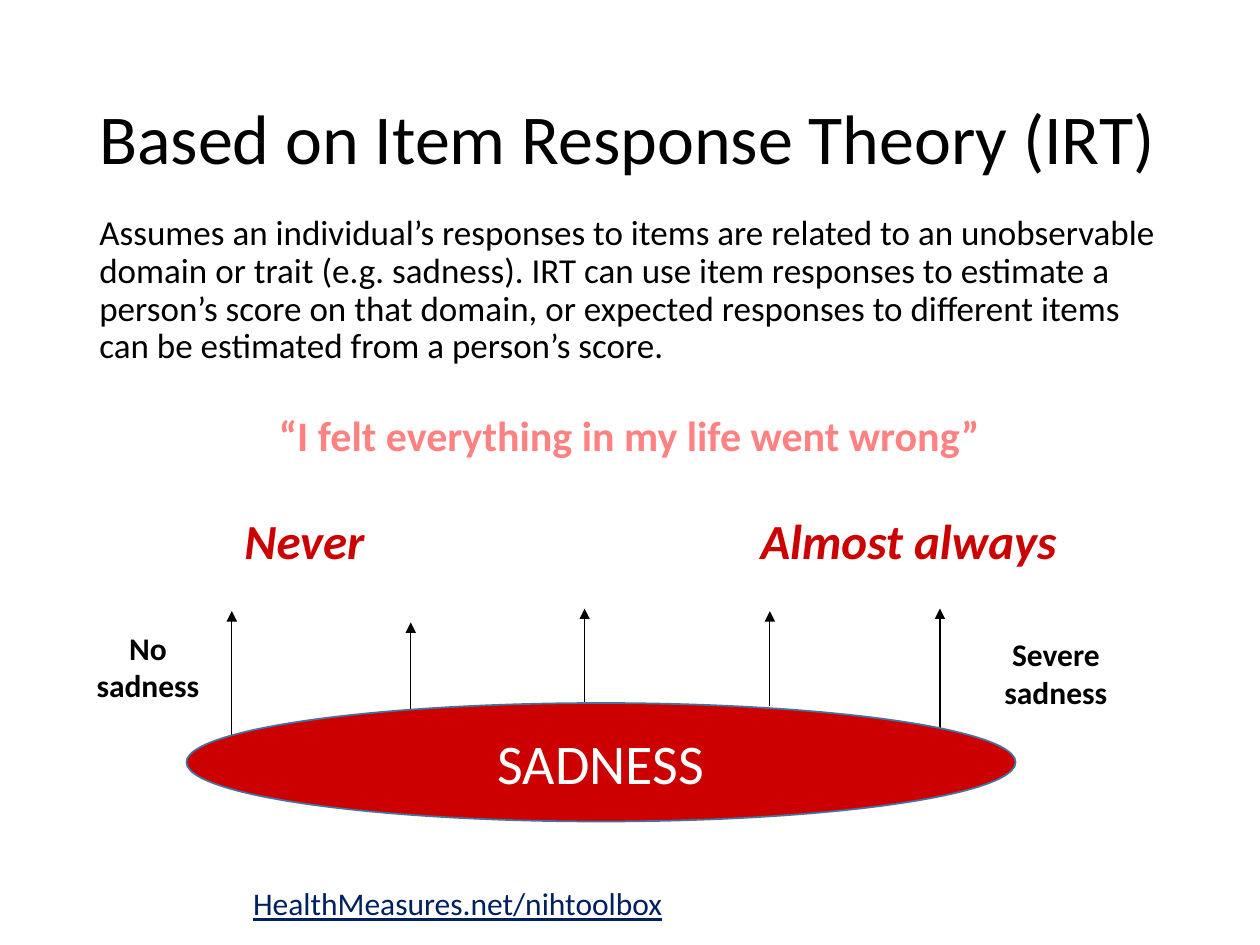
from dataclasses import dataclass

from lxml import etree
from pptx import Presentation
from pptx import util as u
from pptx.dml.color import RGBColor
from pptx.enum import shapes, text
from pptx.oxml.ns import qn
from pptx.util import Inches


@dataclass(frozen=True)
class Theme:
    font: str = "Calibri"
    black: str = "000000"
    white: str = "FFFFFF"
    red: str = "CC0000"
    pink: str = "FF8181"
    navy: str = "002060"
    outline: str = "43739E"
    title: int = 40
    trait: int = 32
    response: int = 28
    quote: int = 24
    body: int = 20
    label: int = 18


THEME = Theme()
CENTER = text.PP_ALIGN.CENTER
MIDDLE = text.MSO_ANCHOR.MIDDLE


def write(frame, words, size, color=THEME.black, align=text.PP_ALIGN.LEFT,
          spacing=None, bold=False, italic=False, underline=False):
    paragraph = frame.paragraphs[0]
    paragraph.alignment = align
    paragraph.line_spacing = spacing
    run = paragraph.add_run()
    run.text = words
    font = run.font
    font.name = THEME.font
    font.size = u.Pt(size)
    font.color.rgb = RGBColor.from_string(color)
    font.bold, font.italic, font.underline = bold, italic, underline


def add_text(slide, box, words, size, anchor=text.MSO_ANCHOR.TOP, wrap=True, **style):
    frame = slide.shapes.add_textbox(*map(Inches, box)).text_frame
    frame.word_wrap = wrap
    frame.vertical_anchor = anchor
    write(frame, words, size, **style)


def add_up_arrow(slide, x, bottom, top):
    arrow = slide.shapes.add_connector(
        shapes.MSO_CONNECTOR.STRAIGHT, *map(Inches, (x, bottom, x, top)))
    arrow.line.color.rgb = RGBColor.from_string(THEME.black)
    arrow.line.width = u.Pt(0.75)
    etree.SubElement(arrow.line._get_or_add_ln(), qn("a:tailEnd"), type="triangle")
    etree.SubElement(arrow._element.spPr, qn("a:effectLst"))


def add_header(slide, box):
    left, top, width, height = box
    add_text(slide, (left, top, width, 1.45), "Based on Item Response Theory (IRT)",
             THEME.title, anchor=MIDDLE, spacing=0.9)
    body_top = 1.26
    add_text(slide, (left, top + body_top, width, height - body_top),
             "Assumes an individual’s responses to items are related to an unobservable "
             "domain or trait (e.g. sadness). IRT can use item responses to estimate a "
             "person’s score on that domain, or expected responses to different items "
             "can be estimated from a person’s score.", THEME.body, spacing=0.9)


def add_responses(slide, box):
    """Place the two extreme answers in a plain one-row table."""
    table = slide.shapes.add_table(1, 2, *map(Inches, box)).table
    table.first_row = table.horz_banding = False
    answers = (("Never", 4.12, 1.25, text.PP_ALIGN.LEFT),
               ("Almost always", 3.95, 0.95, CENTER))
    for column, (answer, width, indent, align) in enumerate(answers):
        table.columns[column].width = Inches(width)
        cell = table.cell(0, column)
        cell.fill.background()
        cell.margin_left = Inches(indent)
        cell.vertical_anchor = MIDDLE
        write(cell.text_frame, answer, THEME.response, color=THEME.red,
              align=align, bold=True, italic=True)


def add_trait_scale(slide, box):
    """Place the trait ellipse along the bottom, with arrows and end labels above."""
    left, top, width, height = box
    arrows = ((1.33, 1.02, 0.02), (2.75, 0.86, 0.11), (4.13, 0.75, 0),
              (5.6, 0.77, 0.02), (6.95, 1, 0))
    for x, tail, head in arrows:
        add_up_arrow(slide, left + x, top + tail, top + head)

    for words, x, y, label_width in (("No sadness", 0, 0.11, 1.33),
                                     ("Severe sadness", width - 1.72, 0.16, 1.72)):
        add_text(slide, (left + x, top + y, label_width, 0.71), words,
                 THEME.label, align=CENTER, bold=True)

    trait_height = 0.94
    trait = slide.shapes.add_shape(
        shapes.MSO_SHAPE.OVAL, Inches(left + 0.97),
        Inches(top + height - trait_height), Inches(6.58), Inches(trait_height))
    trait.shadow.inherit = False
    trait.fill.solid()
    trait.fill.fore_color.rgb = RGBColor.from_string(THEME.red)
    trait.line.color.rgb = RGBColor.from_string(THEME.outline)
    trait.line.width = u.Pt(1)
    trait.text_frame.vertical_anchor = MIDDLE
    write(trait.text_frame, "SADNESS", THEME.trait, color=THEME.white, align=CENTER)


def main():
    presentation = Presentation()
    presentation.slide_width, presentation.slide_height = Inches(10), Inches(7.5)
    slide = presentation.slides.add_slide(presentation.slide_layouts[6])

    add_text(slide, (1.91, 6.97, 3.59, 0.4), "HealthMeasures.net/nihtoolbox",
             THEME.label, wrap=False, color=THEME.navy, underline=True)
    add_header(slide, (0.69, 0.4, 8.62, 6.36))
    add_text(slide, (1.08, 3.2, 7.83, 0.5), "“I felt everything in my life went wrong”",
             THEME.quote, color=THEME.pink, align=CENTER, bold=True)
    add_responses(slide, (0.69, 3.87, 8.07, 0.87))
    add_trait_scale(slide, (0.51, 4.83, 8.73, 1.69))

    presentation.save("out.pptx")


if __name__ == "__main__":
    main()
